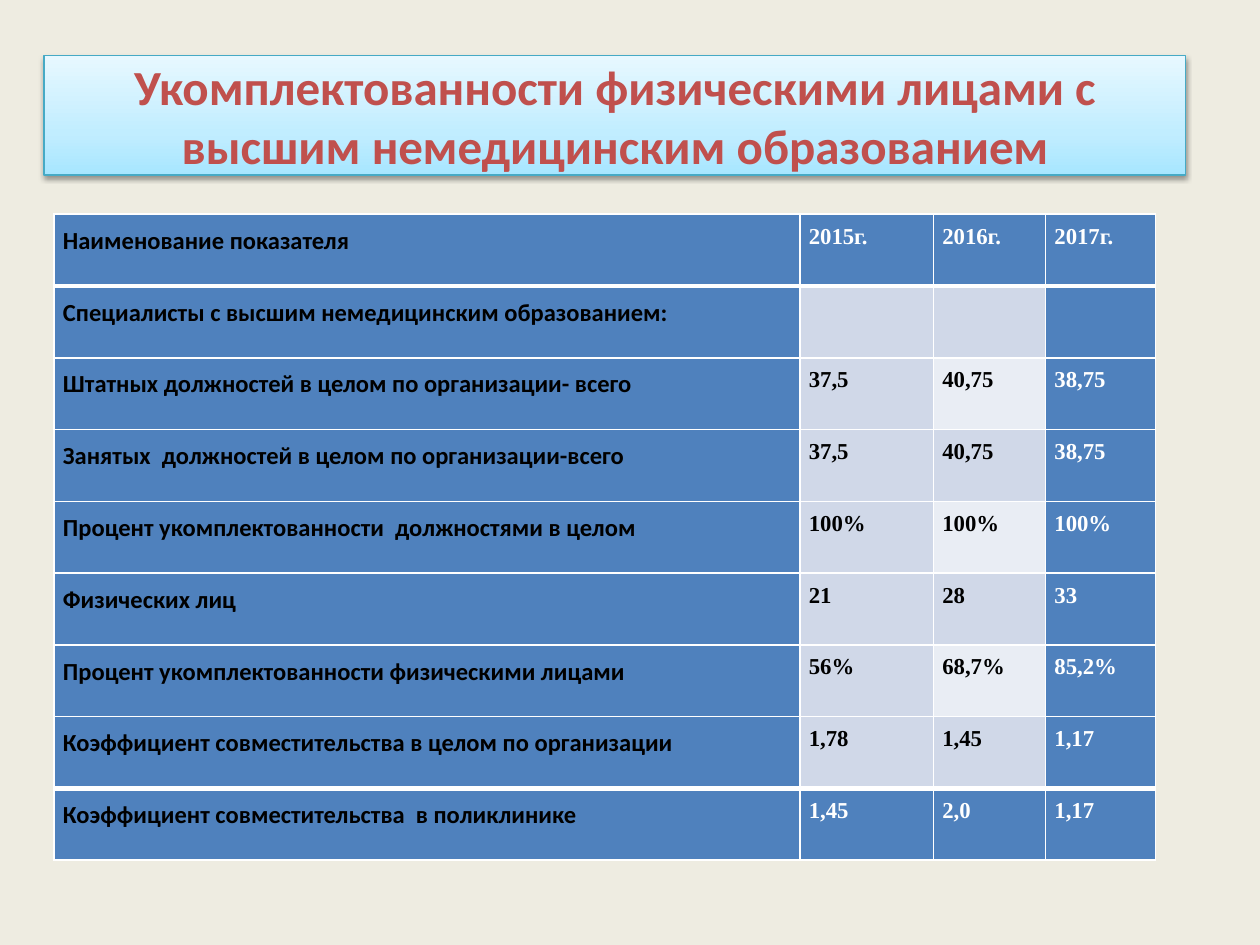
import copy
import pptx
import pptx.util
import pptx.dml.color
import pptx.enum.shapes
import pptx.enum.text
import pptx.oxml
import pptx.oxml.ns

THEME = {
    "back": "EEECE1", "title": "C0504D", "edge": "46AAC5",
    "glow": [(0, "A7E6FF"), (0.35, "C1EDFF"), (1, "E7F8FF")],
    "main": "4F81BD", "band": "D0D8E8", "pale": "E9EDF4",
    "dark": "000000", "light": "FFFFFF",
    "sans": "Calibri", "serif": "Times New Roman",
    "head": 28, "label": 14, "value": 13, "thin": 1, "thick": 3,
}
SPACE = 'xmlns:a="http://schemas.openxmlformats.org/drawingml/2006/main"'
ROWS = [
    ("Наименование показателя", "2015г.", "2016г.", "2017г."),
    ("Специалисты с высшим немедицинским образованием:", "", "", ""),
    ("Штатных должностей в целом по организации- всего", "37,5", "40,75", "38,75"),
    ("Занятых  должностей в целом по организации-всего", "37,5", "40,75", "38,75"),
    ("Процент укомплектованности  должностями в целом", "100%", "100%", "100%"),
    ("Физических лиц", "21", "28", "33"),
    ("Процент укомплектованности физическими лицами", "56%", "68,7%", "85,2%"),
    ("Коэффициент совместительства в целом по организации", "1,78", "1,45", "1,17"),
    ("Коэффициент совместительства  в поликлинике", "1,45", "2,0", "1,17"),
]
COLS = [5.92, 1.06, 0.89, 0.87]
STEP = 0.57
Inch = pptx.util.Inches


def tint(name):
    return pptx.dml.color.RGBColor.from_string(THEME.get(name, name))


def style(para, font, size, color, align):
    para.font.name = THEME[font]
    para.font.size = pptx.util.Pt(THEME[size])
    para.font.bold = True
    para.font.color.rgb = tint(color)
    para.alignment = align


deck = pptx.Presentation()
deck.slide_width, deck.slide_height = Inch(10), Inch(7.5)
slide = deck.slides.add_slide(deck.slide_layouts[6])
slide.background.fill.solid()
slide.background.fill.fore_color.rgb = tint("back")

title = slide.shapes.add_shape(
    pptx.enum.shapes.MSO_SHAPE.RECTANGLE,
    Inch(0.35), Inch(0.44), Inch(9.06), Inch(0.95))
title.fill.gradient()
title.fill.gradient_angle = 90
stops = title._element.spPr.find(".//" + pptx.oxml.ns.qn("a:gsLst"))
stops.append(copy.deepcopy(stops[-1]))
for stop, (place, color) in zip(title.fill.gradient_stops, THEME["glow"]):
    stop.position = place
    stop.color.rgb = tint(color)
title.line.color.rgb = tint("edge")
title.line.width = pptx.util.Pt(0.75)
title.shadow.inherit = False
title._element.spPr.find(pptx.oxml.ns.qn("a:effectLst")).append(pptx.oxml.parse_xml(
    f'<a:outerShdw {SPACE} blurRad="39370" dist="20320" dir="5400000" rotWithShape="0">'
    f'<a:srgbClr val="{THEME["dark"]}"><a:alpha val="38000"/></a:srgbClr></a:outerShdw>'))
frame = title.text_frame
frame.word_wrap = True
frame.vertical_anchor = pptx.enum.text.MSO_ANCHOR.MIDDLE
frame.text = "Укомплектованности физическими лицами с высшим немедицинским образованием"
style(frame.paragraphs[0], "sans", "head", "title", pptx.enum.text.PP_ALIGN.CENTER)

last = len(ROWS) - 1
table = slide.shapes.add_table(
    len(ROWS), len(COLS), Inch(0.43), Inch(1.7),
    Inch(sum(COLS)), Inch(STEP * len(ROWS))).table
for col, width in zip(table.columns, COLS):
    col.width = Inch(width)

for r, row in enumerate(ROWS):
    table.rows[r].height = Inch(STEP)
    for c, text in enumerate(row):
        cell = table.cell(r, c)
        cell.margin_left = cell.margin_right = Inch(0.07)
        cell.margin_top = cell.margin_bottom = 0
        solid = r in (0, last) or c in (0, 3)
        pale = c == 2 and r % 2 == 0
        cell.fill.solid()
        cell.fill.fore_color.rgb = tint("main" if solid else "pale" if pale else "band")
        thick = {"T": r in (1, last), "B": r in (0, last - 1)}
        for i, side in enumerate("LRTB"):
            wide = pptx.util.Pt(THEME["thick" if thick.get(side) else "thin"])
            cell._tc.get_or_add_tcPr().insert(i, pptx.oxml.parse_xml(
                f'<a:ln{side} {SPACE} w="{wide}"><a:solidFill>'
                f'<a:srgbClr val="{THEME["light"]}"/></a:solidFill></a:ln{side}>'))
        cell.text = text
        para = cell.text_frame.paragraphs[0]
        para.line_spacing = 1.4
        style(para, "sans" if c == 0 else "serif", "label" if c == 0 else "value",
              "light" if solid and c else "dark", pptx.enum.text.PP_ALIGN.JUSTIFY)

deck.save("out.pptx")
